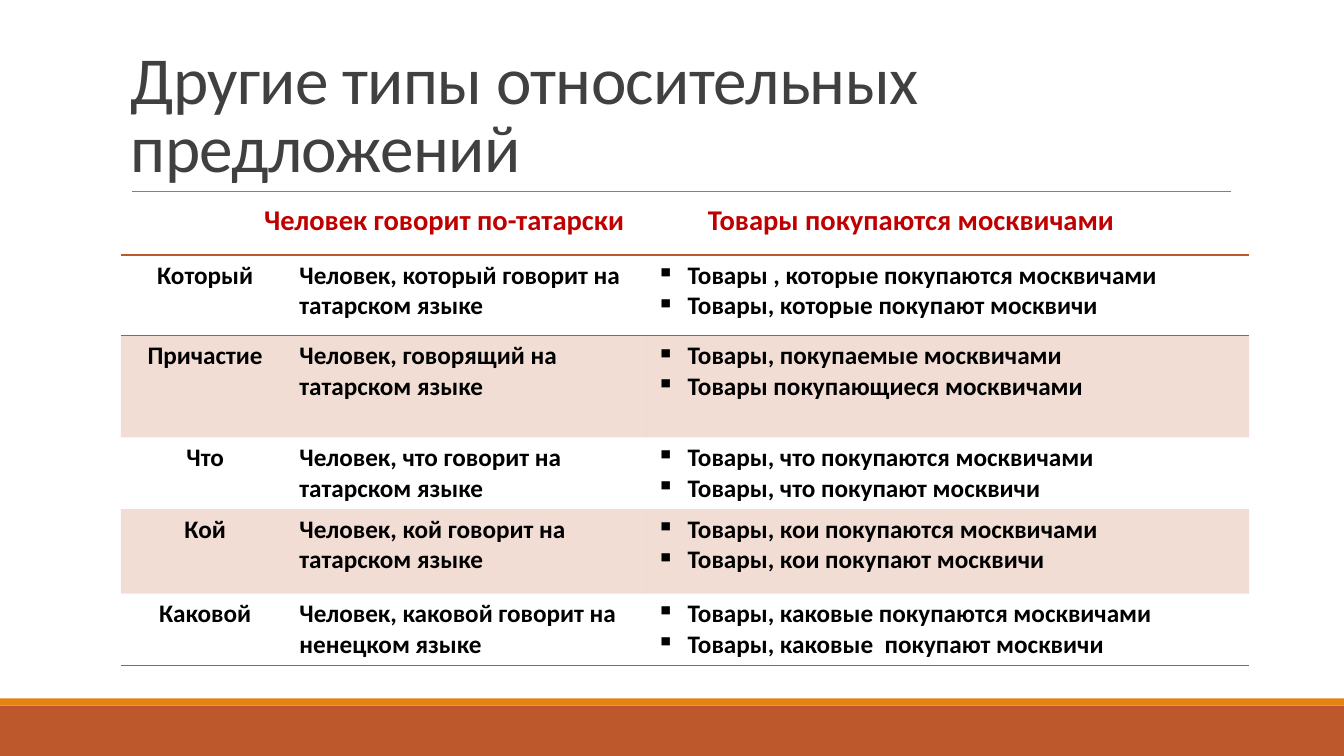
from lxml import etree
from pptx import Presentation, util as u
from pptx.dml.color import RGBColor
from pptx.enum import shapes, text
from pptx.oxml import parse_xml
from pptx.oxml.ns import nsdecls, qn

TITLE = "Другие типы относительных предложений"
HEADINGS = [("Человек говорит по-татарски", 2.62), ("Товары покупаются москвичами", 7.02)]
CLAUSES = [
    ("Который", "Человек, который говорит на татарском языке",
     "Товары , которые покупаются москвичами\nТовары, которые покупают москвичи"),
    ("Причастие", "Человек, говорящий на татарском языке",
     "Товары, покупаемые москвичами\nТовары покупающиеся москвичами"),
    ("Что", "Человек, что говорит на татарском языке",
     "Товары, что покупаются москвичами\nТовары, что покупают москвичи"),
    ("Кой", "Человек, кой говорит на татарском языке",
     "Товары, кои покупаются москвичами\nТовары, кои покупают москвичи"),
    ("Каковой", "Человек, каковой говорит на ненецком языке",
     "Товары, каковые покупаются москвичами\nТовары, каковые  покупают москвичи"),
]
COLUMNS = [1.67, 3.54, 5.98]
ROWS = [0.8, 1.01, 0.71, 0.84, 0.71]
RULED_SIDES = {0: ["lnT", "lnB"], len(ROWS) - 1: ["lnB"]}
COLORS = {"rust": "BD582C", "orange": "E48312", "rule": "808080",
          "title": "404040", "heading": "C00000", "body": "000000"}
WIDTH, HEIGHT, LEFT = 13.33, 7.5, 1.2
BANDS = [("rust", 7, 0.5), ("orange", 6.93, 0.07)]
NO_STYLE = "{2D5ABB26-0587-4C30-8999-92F81FD0307C}"


def color(name):
    return RGBColor.from_string(COLORS[name])


def format_run(span, size, shade, bold=True):
    span.font.name = "Calibri"
    span.font.size = u.Pt(size)
    span.font.bold = bold
    span.font.color.rgb = color(shade)


def add_text(page, words, left, top, width, height, size, shade, bold=True):
    box = page.shapes.add_textbox(*map(u.Inches, (left, top, width, height)))
    frame = box.text_frame
    frame.word_wrap = True
    frame.text = words
    format_run(frame.paragraphs[0].runs[0], size, shade, bold)
    return frame


def add_bullet(para):
    props = para._p.get_or_add_pPr()
    props.set("marL", str(u.Inches(0.31)))
    props.set("indent", str(-u.Inches(0.31)))
    etree.SubElement(props, qn("a:buChar")).set("char", "▪")


def add_border(cell, side, position):
    cell._tc.get_or_add_tcPr().insert(position, parse_xml(
        f'<a:{side} {nsdecls("a")} w="{u.Pt(1)}"><a:solidFill>'
        f'<a:srgbClr val="{COLORS["rust"]}"/></a:solidFill></a:{side}>'))


def fill_cell(cell, row, column, words):
    cell.text = words
    for para in cell.text_frame.paragraphs:
        format_run(para.runs[0], 18, "body")
        if column == 0:
            para.alignment = text.PP_ALIGN.CENTER
        if column == 2:
            add_bullet(para)
    for position, side in enumerate(RULED_SIDES.get(row, [])):
        add_border(cell, side, position)
    if row % 2:
        cell.fill.solid()
        cell.fill.fore_color.rgb = color("rust")
        shade = next(cell._tc.iter(qn("a:tcPr"))).find(".//" + qn("a:srgbClr"))
        etree.SubElement(shade, qn("a:alpha")).set("val", "20000")
    else:
        cell.fill.background()


def add_clause_table(page):
    holder = page.shapes.add_table(
        len(ROWS), len(COLUMNS), u.Inches(LEFT), u.Inches(2.53),
        u.Inches(sum(COLUMNS)), u.Inches(sum(ROWS)))
    table = holder.table
    table.first_row = table.horz_banding = False
    next(holder.element.iter(qn("a:tableStyleId"))).text = NO_STYLE
    for column, width in zip(table.columns, COLUMNS):
        column.width = u.Inches(width)
    for index, height in enumerate(ROWS):
        table.rows[index].height = u.Inches(height)
        for column, words in enumerate(CLAUSES[index]):
            fill_cell(table.cell(index, column), index, column, words)


def main():
    deck = Presentation()
    deck.slide_width, deck.slide_height = u.Inches(WIDTH), u.Inches(HEIGHT)
    page = deck.slides.add_slide(deck.slide_layouts[6])

    for shade, top, height in BANDS:
        band = page.shapes.add_shape(shapes.MSO_SHAPE.RECTANGLE, 0, u.Inches(top),
                                     deck.slide_width, u.Inches(height))
        band.shadow.inherit = False
        band.fill.solid()
        band.fill.fore_color.rgb = color(shade)
        band.line.fill.background()

    rule = page.shapes.add_connector(shapes.MSO_CONNECTOR.STRAIGHT,
                                     *map(u.Inches, (1.31, 1.9, 12.21, 1.9)))
    rule.line.color.rgb = color("rule")
    rule.line.width = u.Pt(0.5)
    etree.SubElement(rule.element.spPr, qn("a:effectLst"))

    title = add_text(page, TITLE, LEFT, 0.31, 11, 1.59, 48, "title", False)
    title.vertical_anchor = text.MSO_ANCHOR.BOTTOM
    title.paragraphs[0].line_spacing = 0.85
    title.paragraphs[0].runs[0].font._element.set("spc", "-50")

    for words, left in HEADINGS:
        heading = add_text(page, words, left, 2, 4.3, 0.41, 20.4, "heading")
        heading.margin_left = heading.margin_right = 0
        heading.margin_top = heading.margin_bottom = 0

    add_clause_table(page)
    deck.save("out.pptx")


if __name__ == "__main__":
    main()
